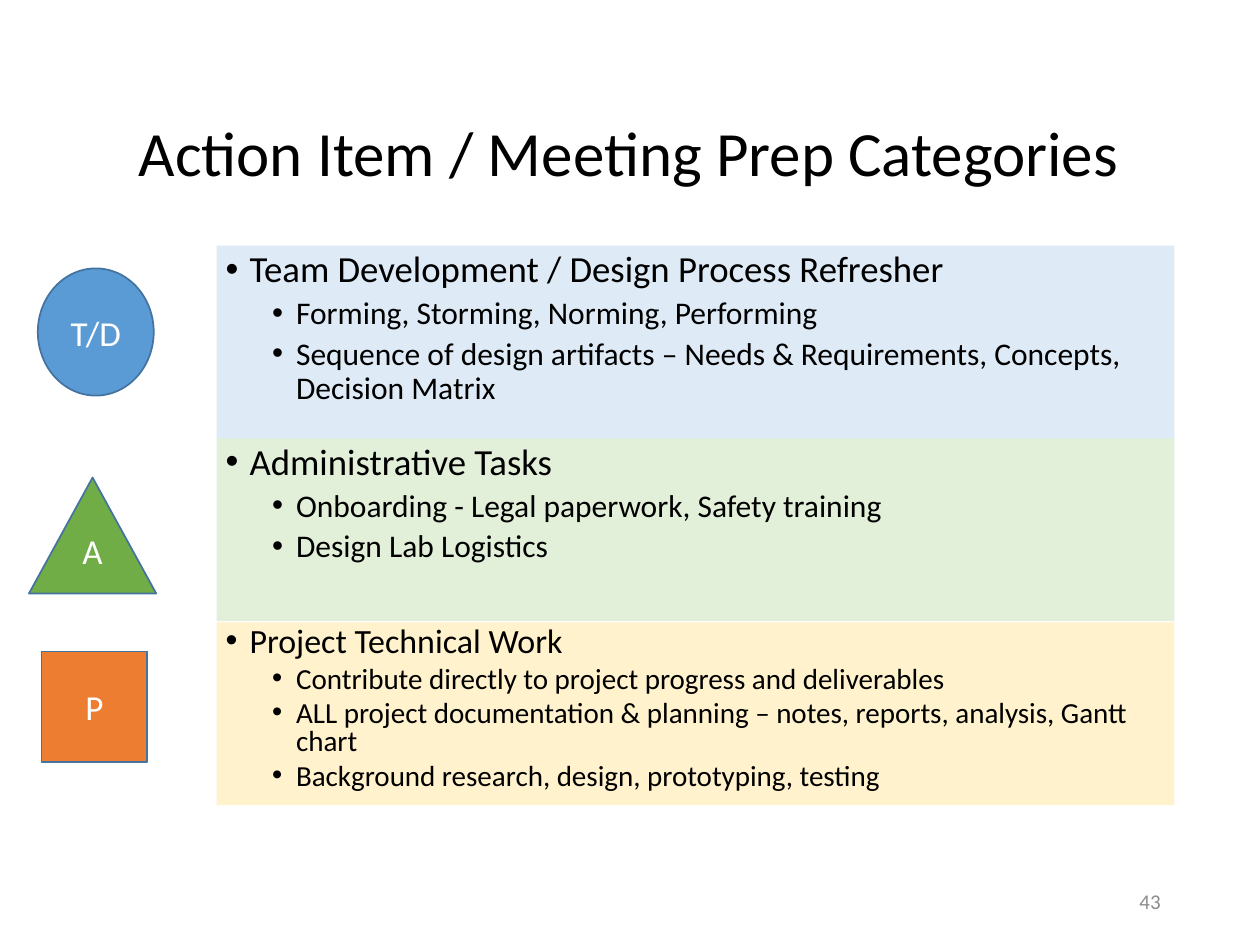
from dataclasses import dataclass

from lxml.etree import SubElement
from pptx import Presentation
from pptx.dml.color import RGBColor
from pptx.enum.shapes import MSO_SHAPE
from pptx.enum.text import MSO_ANCHOR, MSO_AUTO_SIZE, PP_ALIGN
from pptx.oxml.ns import qn
from pptx.util import Inches, Pt


@dataclass(frozen=True)
class Theme:
    font: str = "Calibri"
    ink: str = "000000"
    white: str = "FFFFFF"
    muted: str = "8C8C8C"
    outline: str = "43739E"
    blue: str = "5B9BD5"
    green: str = "70AD47"
    orange: str = "ED7D31"
    pale_blue: str = "DEEBF7"
    pale_green: str = "E2F0D9"
    pale_yellow: str = "FFF2CC"
    title_size: float = 36
    badge_size: float = 20
    number_size: float = 12
    list_sizes: tuple = (21, 18)
    compact_sizes: tuple = (19.4, 16.6)


class CategorySlide:
    """Draws titles, category panels and badges in one theme."""

    def __init__(self, slide, theme):
        self.slide = slide
        self.theme = theme

    def place(self, shape, box):
        shape.left, shape.top, shape.width, shape.height = map(Inches, box)

    def style(self, paragraph, size, color, align):
        paragraph.alignment = align
        for run in paragraph.runs:
            run.font.name = self.theme.font
            run.font.size = Pt(size)
            run.font.bold = False
            run.font.color.rgb = RGBColor.from_string(color)

    def fill(self, shape, color):
        shape.fill.solid()
        shape.fill.fore_color.rgb = RGBColor.from_string(color)

    def title(self, wording, box):
        title = self.slide.shapes.title
        self.place(title, box)
        frame = title.text_frame
        frame.text = wording
        frame.auto_size = MSO_AUTO_SIZE.NONE
        frame.vertical_anchor = MSO_ANCHOR.MIDDLE
        heading = frame.paragraphs[0]
        heading.line_spacing = 0.9
        self.style(heading, self.theme.title_size, self.theme.ink, PP_ALIGN.CENTER)

    def panel(self, index, box, color, category, tasks, sizes, spacing):
        panel = self.slide.placeholders[index]
        self.place(panel, box)
        self.fill(panel, color)
        frame = panel.text_frame
        frame.text = "\n".join([category, *tasks])
        frame.auto_size = MSO_AUTO_SIZE.NONE
        frame.vertical_anchor = MSO_ANCHOR.TOP
        frame.margin_left = frame.margin_right = Inches(0.07)
        frame.margin_top = frame.margin_bottom = Inches(0.04)
        for position, paragraph in enumerate(frame.paragraphs):
            level = min(position, 1)
            self.bullet(paragraph, level, sizes[level], spacing)

    def bullet(self, paragraph, level, size, spacing):
        paragraph.level = level
        paragraph.line_spacing = spacing
        paragraph.space_before = Pt((7.5, 3.8)[level])
        paragraph.space_after = Pt(0)
        self.style(paragraph, size, self.theme.ink, PP_ALIGN.LEFT)
        properties = paragraph._p.get_or_add_pPr()
        properties.set("marL", str(Inches((0.19, 0.56)[level])))
        properties.set("indent", str(Inches(-0.19)))
        SubElement(properties, qn("a:buFont")).set("typeface", "Arial")
        SubElement(properties, qn("a:buChar")).set("char", "•")

    def badge(self, preset, box, color, letter, bottom_inset=0.05):
        badge = self.slide.shapes.add_shape(preset, *map(Inches, box))
        badge.shadow.inherit = False
        self.fill(badge, color)
        badge.line.color.rgb = RGBColor.from_string(self.theme.outline)
        badge.line.width = Pt(1)
        frame = badge.text_frame
        frame.text = letter
        frame.vertical_anchor = MSO_ANCHOR.MIDDLE
        frame.margin_bottom = Inches(bottom_inset)
        self.style(frame.paragraphs[0], self.theme.badge_size, self.theme.white, PP_ALIGN.CENTER)

    def page_number(self, number, box):
        frame = self.slide.shapes.add_textbox(*map(Inches, box)).text_frame
        frame.text = number
        frame.word_wrap = True
        frame.vertical_anchor = MSO_ANCHOR.MIDDLE
        self.style(frame.paragraphs[0], self.theme.number_size, self.theme.muted, PP_ALIGN.RIGHT)

    def remove_empty_placeholders(self):
        for placeholder in list(self.slide.placeholders):
            if not placeholder.text_frame.text:
                placeholder.element.getparent().remove(placeholder.element)


def main():
    theme = Theme()
    deck = Presentation()
    deck.slide_width, deck.slide_height = Inches(10), Inches(7.5)
    comparison_layout = deck.slide_layouts[4]
    page = CategorySlide(deck.slides.add_slide(comparison_layout), theme)

    page.title("Action Item / Meeting Prep Categories", (0.68, 0.69, 8.62, 1.09))

    categories = [
        (1.95, 1.54, theme.pale_blue, "Team Development / Design Process Refresher",
         ["Forming, Storming, Norming, Performing",
          "Sequence of design artifacts – Needs & Requirements, Concepts, Decision Matrix"],
         theme.list_sizes, 0.9),
        (3.48, 1.45, theme.pale_green, "Administrative Tasks",
         ["Onboarding - Legal paperwork, Safety training", "Design Lab Logistics"],
         theme.list_sizes, 0.9),
        (4.94, 1.45, theme.pale_yellow, "Project Technical Work",
         ["Contribute directly to project progress and deliverables",
          "ALL project documentation & planning – notes, reports, analysis, Gantt chart",
          "Background research, design, prototyping, testing"],
         theme.compact_sizes, 0.8),
    ]
    for index, (top, height, *content) in enumerate(categories, start=1):
        page.panel(index, (1.72, top, 7.6, height), *content)

    page.badge(MSO_SHAPE.OVAL, (0.3, 2.13, 0.92, 1.01), theme.blue, "T/D")
    page.badge(MSO_SHAPE.ISOSCELES_TRIANGLE, (0.23, 3.79, 1.01, 0.92), theme.green, "A", 0.27)
    page.badge(MSO_SHAPE.RECTANGLE, (0.33, 5.17, 0.84, 0.88), theme.orange, "P")

    page.page_number("43", (7.06, 6.95, 2.25, 0.4))
    page.remove_empty_placeholders()
    deck.save("out.pptx")


if __name__ == "__main__":
    main()
